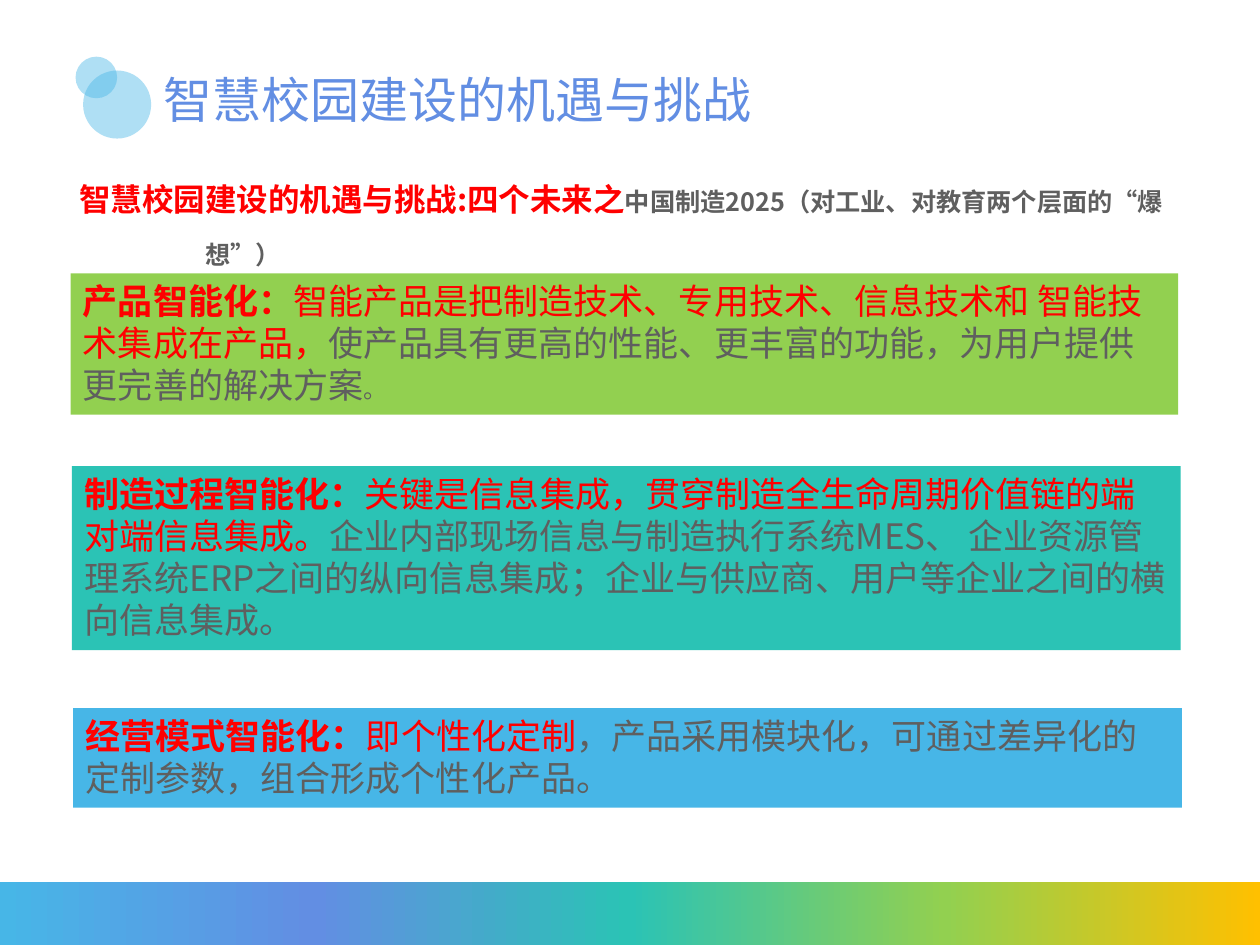
from lxml import etree
from pptx import Presentation
from pptx.dml.color import RGBColor
from pptx.enum import shapes, text
from pptx.oxml import ns
from pptx.util import Inches, Pt

# Content
RED, GREY, BLUE, PERIWINKLE, TEAL, GREEN, GOLD = (
    "FF0000", "5F5F5F", "47B6E7", "628EE3", "2BC3B5", "92D050", "FFC000")
CJK_FONT = "Noto Sans CJK SC"
TITLE = "智慧校园建设的机遇与挑战"
# Runs: wording, size, colour, bold
HEADING = [
    ("智慧校园建设的机遇与挑战:四个未来之", 18, RED, True),
    ("中国制造2025（对工业、对教育两个层面的“爆想”）", 14.4, GREY, True),
]
# Panels: position (left, top, width, height), fill, runs
PANELS = [
    ((0.56, 2.17, 8.79, 1.12), GREEN, [
        ("产品智能化：", 20, RED, True),
        ("智能产品是把制造技术、专用技术、信息技术和 智能技术集成在产品，", 20, RED, False),
        ("使产品具有更高的性能、更丰富的功能，为用户提供更完善的解决方案", 20, GREY, False),
        ("。", 13.5, GREY, False),
    ]),
    ((0.57, 3.7, 8.8, 1.46), TEAL, [
        ("制造过程智能化：", 20, RED, True),
        ("关键是信息集成，贯穿制造全生命周期价值链的端对端信息集成。", 20, RED, False),
        ("企业内部现场信息与制造执行系统MES、 企业资源管理系统ERP之间的纵向信息集成；"
         "企业与供应商、用户等企业之间的横向信息集成。", 20, GREY, False),
    ]),
    ((0.58, 5.62, 8.8, 0.79), BLUE, [
        ("经营模式智能化：", 20, RED, True),
        ("即个性化定制", 20, RED, False),
        ("，产品采用模块化，可通过差异化的定制参数，组合形成个性化产品。", 20, GREY, False),
    ]),
]
CIRCLES = [(0.66, 0.56, 0.54, 0.54), (0.6, 0.45, 0.33, 0.33)]
BAND = (0, 7, 10, 0.5)
BAND_COLOURS = [BLUE, PERIWINKLE, TEAL, GREEN, GOLD]


def colour(value):
    return RGBColor.from_string(value)


def inches(position):
    return [Inches(length) for length in position]


def add_plain_shape(slide, kind, position, fill):
    shape = slide.shapes.add_shape(kind, *inches(position))
    shape.shadow.inherit = False
    shape.line.fill.background()
    shape.fill.solid()
    shape.fill.fore_color.rgb = colour(fill)
    return shape


def set_alpha(shape, percent):
    for element in shape.fill._xPr.iter(ns.qn("a:srgbClr")):
        etree.SubElement(element, ns.qn("a:alpha"), val=str(percent * 1000))


def set_gradient(shape, colours):
    shape.fill.gradient()
    shape.fill.gradient_angle = 0
    stops = next(shape.fill._xPr.iter(ns.qn("a:gsLst")))
    for stop in list(stops):
        stops.remove(stop)
    for index, value in enumerate(colours):
        position = index * 100000 // (len(colours) - 1)
        stop = etree.SubElement(stops, ns.qn("a:gs"), pos=str(position))
        etree.SubElement(stop, ns.qn("a:srgbClr"), val=value)


def write_runs(paragraph, runs):
    paragraph.alignment = text.PP_ALIGN.LEFT
    for wording, size, value, bold in runs:
        run = paragraph.add_run()
        run.text = wording
        run.font.size = Pt(size)
        run.font.bold = bold
        run.font.color.rgb = colour(value)
        run.font.name = CJK_FONT
        etree.SubElement(run.font._element, ns.qn("a:ea"), typeface=CJK_FONT)


presentation = Presentation()
presentation.slide_width, presentation.slide_height = Inches(10), Inches(7.5)
slide = presentation.slides.add_slide(presentation.slide_layouts[5])

# Footer band and title ornament
band = add_plain_shape(slide, shapes.MSO_SHAPE.RECTANGLE, BAND, BLUE)
set_gradient(band, BAND_COLOURS)
for position in CIRCLES:
    set_alpha(add_plain_shape(slide, shapes.MSO_SHAPE.OVAL, position, BLUE), 43)

# Title
title = slide.shapes.title
title.left, title.top, title.width, title.height = inches((1.2, 0.31, 8.63, 1.01))
title.text_frame.text = TITLE
title.text_frame.vertical_anchor = text.MSO_ANCHOR.MIDDLE
title.text_frame.auto_size = text.MSO_AUTO_SIZE.NONE
paragraph = title.text_frame.paragraphs[0]
paragraph.alignment = text.PP_ALIGN.LEFT
paragraph.line_spacing = 0.9
paragraph.font.name = "Arial"
paragraph.font.size = Pt(28)
paragraph.font.color.rgb = colour(PERIWINKLE)

# Heading with a hanging indent
heading = slide.shapes.add_textbox(*inches((0.53, 1.26, 9.2, 0.7)))
heading.text_frame.word_wrap = True
paragraph = heading.text_frame.paragraphs[0]
paragraph.line_spacing = Pt(30)
properties = paragraph._p.get_or_add_pPr()
properties.set("marL", str(Inches(1)))
properties.set("indent", str(-Inches(1)))
write_runs(paragraph, HEADING)

# Panels
for position, fill, runs in PANELS:
    panel = add_plain_shape(slide, shapes.MSO_SHAPE.RECTANGLE, position, fill)
    panel.text_frame.word_wrap = True
    panel.text_frame.vertical_anchor = text.MSO_ANCHOR.TOP
    panel.text_frame.auto_size = text.MSO_AUTO_SIZE.SHAPE_TO_FIT_TEXT
    write_runs(panel.text_frame.paragraphs[0], runs)

presentation.save("out.pptx")
